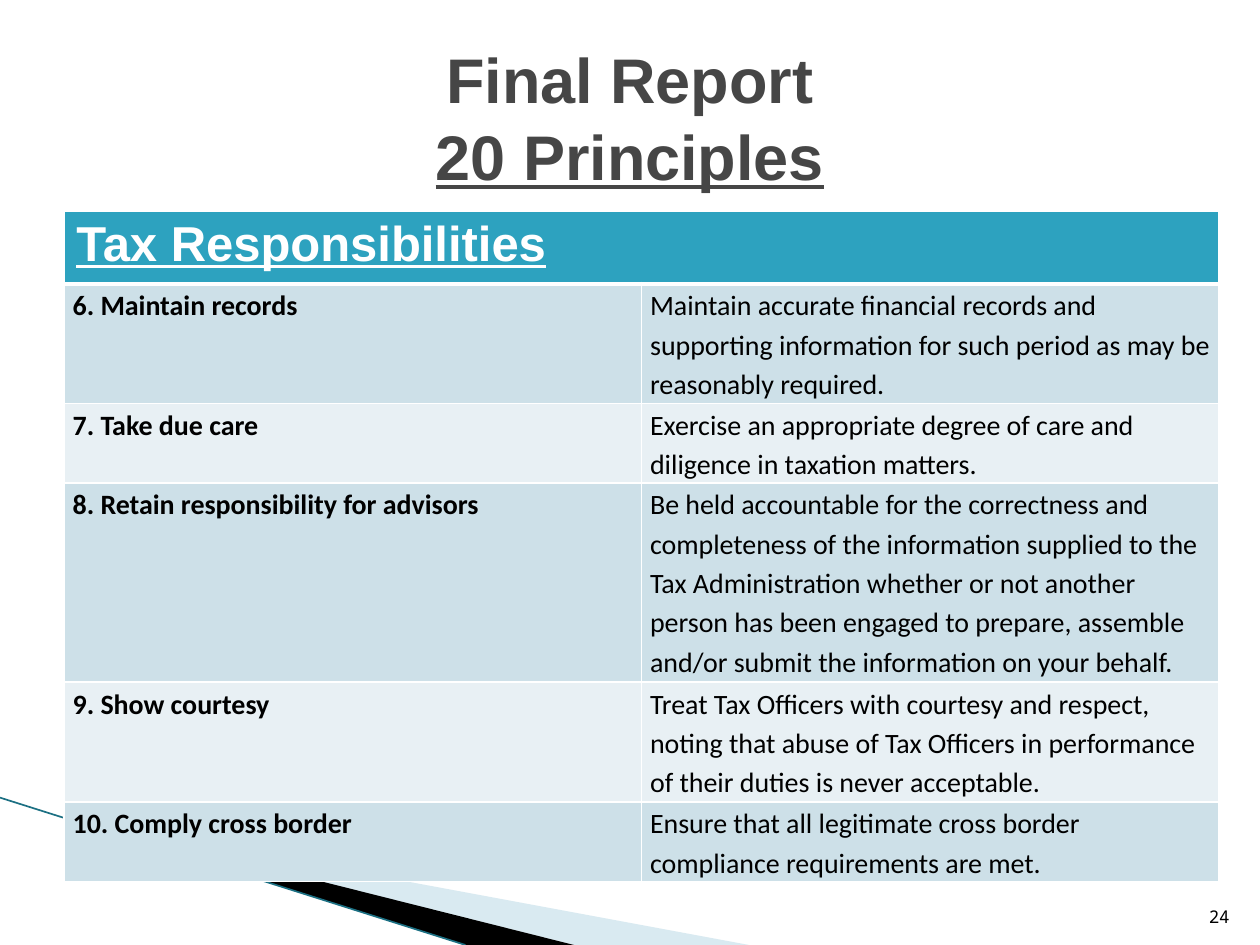
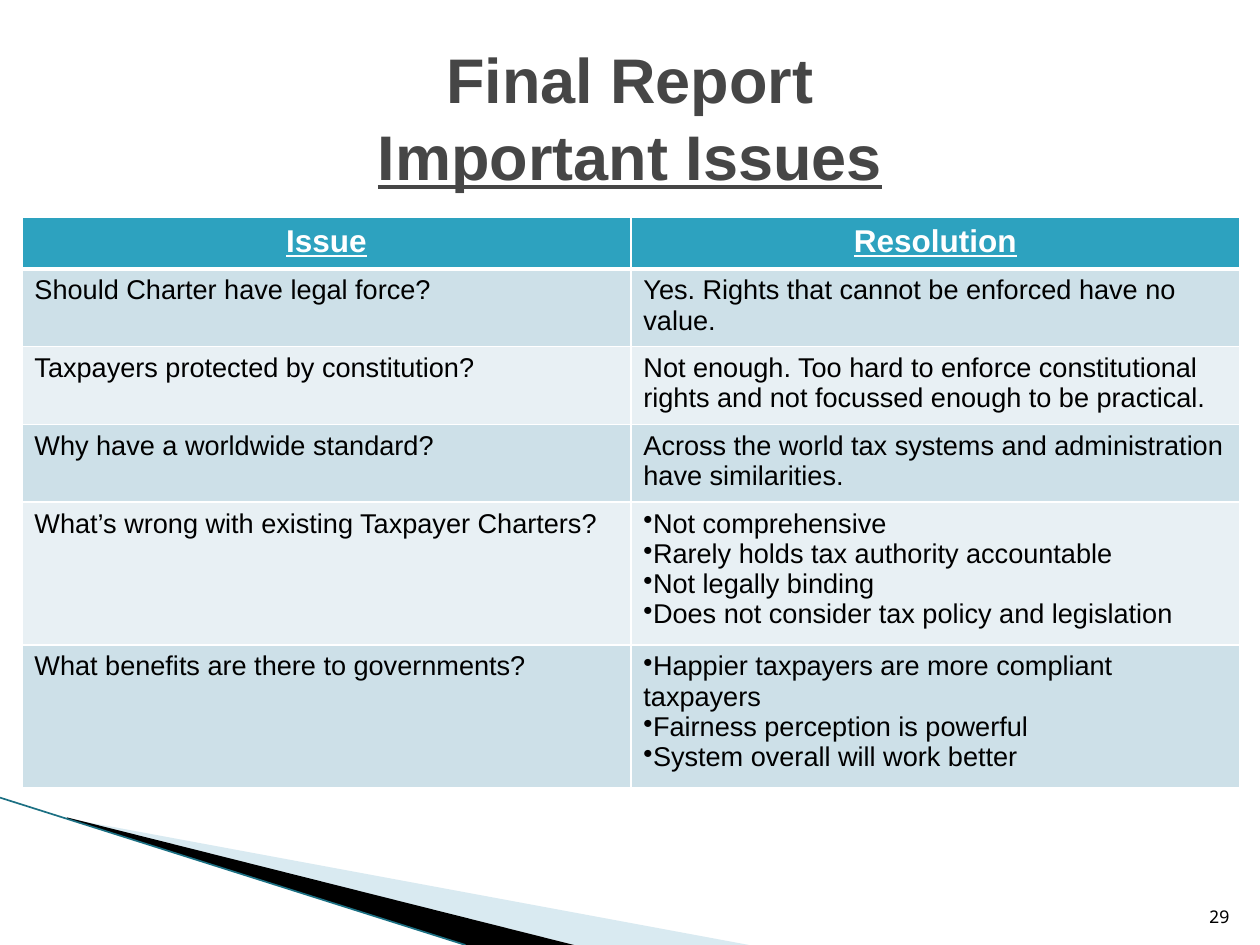
from dataclasses import dataclass

from lxml import etree
from pptx import Presentation
from pptx.dml.color import RGBColor
from pptx.enum import text as txt
from pptx.enum import shapes as shp
from pptx.oxml import ns
from pptx.util import Pt


@dataclass(frozen=True)
class Theme:
    title: str = "464646"
    ink: str = "000000"
    white: str = "FFFFFF"
    header: str = "2DA2BF"
    bands: tuple = ("CDE0E8", "E8F0F4")
    pale_wedge: str = "A0CBDC"
    edge: str = "1C7083"
    heading_font: str = "Arial"
    body_font: str = "Calibri"
    number_font: str = "Noto Sans Mono"
    title_size: float = 36
    number_size: float = 10
    grid_width: float = 1
    header_rule: float = 3


THEME = Theme()


@dataclass(frozen=True)
class CellStyle:
    size: float
    font: str
    colour: str = THEME.ink
    bold_columns: tuple = ()
    underline: bool = False
    align: txt.PP_ALIGN = txt.PP_ALIGN.LEFT
    spacing: float | None = None
    inset: tuple = (7.2, 3.6)


@dataclass(frozen=True)
class Grid:
    left: float
    top: float
    width: float
    row_heights: tuple
    header: tuple
    rows: tuple
    header_style: CellStyle
    body_style: CellStyle


@dataclass(frozen=True)
class Page:
    subtitle: str
    number: str
    grid: Grid


@dataclass(frozen=True)
class Wedge:
    points: tuple
    colour: str
    alpha: int = 100


WEDGES = (
    Wedge(((39.6, 468.5), (428.4, 540), (328.3, 540), (39.6, 468)), THEME.pale_wedge, 40),
    Wedge(((38.2, 467.3), (328.3, 540), (266.5, 540), (38.9, 468)), THEME.ink),
)

PAGES = (
    Page("20 Principles", "24", Grid(
        left=36.5, top=120.5, width=660, row_heights=(41.8, 68.4, 45.4, 113.8, 68.4, 45.4),
        header=("Tax Responsibilities",),
        rows=(
            ("6. Maintain records",
             "Maintain accurate financial records and supporting information "
             "for such period as may be reasonably required."),
            ("7. Take due care",
             "Exercise an appropriate degree of care and diligence in taxation matters."),
            ("8. Retain responsibility for advisors",
             "Be held accountable for the correctness and completeness of the "
             "information supplied to the Tax Administration whether or not another "
             "person has been engaged to prepare, assemble and/or submit the "
             "information on your behalf."),
            ("9. Show courtesy",
             "Treat Tax Officers with courtesy and respect, noting that abuse of Tax "
             "Officers in performance of their duties is never acceptable."),
            ("10. Comply cross border",
             "Ensure that all legitimate cross border compliance requirements are met."),
        ),
        header_style=CellStyle(28, THEME.heading_font, THEME.white, (0,), True),
        body_style=CellStyle(16, THEME.body_font, bold_columns=(0,), spacing=1.15,
                             inset=(5, 0)),
    )),
    Page("Important Issues", "29", Grid(
        left=12.5, top=124.2, width=696, row_heights=(29.5, 41.8, 41.8, 41.8, 76.5, 76.5),
        header=("Issue", "Resolution"),
        rows=(
            ("Should Charter have legal force?",
             "Yes. Rights that cannot be enforced have no value."),
            ("Taxpayers protected by constitution?",
             "Not enough. Too hard to enforce constitutional rights and not "
             "focussed enough to be practical."),
            ("Why have a worldwide standard?",
             "Across the world tax systems and administration have similarities."),
            ("What’s wrong with existing Taxpayer Charters?",
             ("Not comprehensive", "Rarely holds tax authority accountable",
              "Not legally binding", "Does not consider tax policy and legislation")),
            ("What benefits are there to governments?",
             ("Happier taxpayers are more compliant taxpayers",
              "Fairness perception is powerful", "System overall will work better")),
        ),
        header_style=CellStyle(18, THEME.heading_font, THEME.white, (0, 1), True,
                               txt.PP_ALIGN.CENTER),
        body_style=CellStyle(15.5, THEME.heading_font),
    )),
)


def rgb(colour: str) -> RGBColor:
    return RGBColor.from_string(colour)


def sub(parent, tag: str, **attributes):
    return etree.SubElement(parent, ns.qn(tag), **attributes)


def write(frame, content: str, *, size: float, font: str, colour: str,
          bold: bool = False, underline: bool = False, bullet: bool = False,
          align=txt.PP_ALIGN.LEFT, spacing=None) -> None:
    """Add one paragraph, using the frame's first one while it is empty."""
    first = frame.paragraphs[0]
    paragraph = frame.add_paragraph() if first.runs else first
    paragraph.alignment = align
    if spacing:
        paragraph.line_spacing = spacing
    if bullet:
        sub(paragraph._p.get_or_add_pPr(), "a:buChar", char="•")
    run = paragraph.add_run()
    run.text = content
    run.font.size, run.font.name = Pt(size), font
    run.font.bold, run.font.underline = bold, underline
    run.font.color.rgb = rgb(colour)


def add_frame(slide, left: float, top: float, width: float, height: float, anchor):
    frame = slide.shapes.add_textbox(Pt(left), Pt(top), Pt(width), Pt(height)).text_frame
    frame.word_wrap = True
    frame.vertical_anchor = anchor
    return frame


def draw_wedge(slide, wedge: Wedge) -> None:
    start, *others = wedge.points
    builder = slide.shapes.build_freeform(*start, scale=Pt(1))
    builder.add_line_segments(others, close=True)
    shape = builder.convert_to_shape()
    shape.shadow.inherit = False
    shape.line.fill.background()
    shape.fill.solid()
    shape.fill.fore_color.rgb = rgb(wedge.colour)
    if wedge.alpha < 100:
        fill_colour = shape._element.spPr.find(".//" + ns.qn("a:srgbClr"))
        sub(fill_colour, "a:alpha", val=str(wedge.alpha * 1000))


def draw_backdrop(slide) -> None:
    for wedge in WEDGES:
        draw_wedge(slide, wedge)
    edge = slide.shapes.add_connector(shp.MSO_CONNECTOR.STRAIGHT,
                                      Pt(0), Pt(455.8), Pt(266), Pt(540))
    edge.line.color.rgb = rgb(THEME.edge)
    edge.line.width = Pt(0.95)
    sub(edge._element.spPr, "a:effectLst")


def set_borders(cell, top: float, bottom: float) -> None:
    properties = cell._tc.get_or_add_tcPr()
    widths = {"a:lnL": THEME.grid_width, "a:lnR": THEME.grid_width,
              "a:lnT": top, "a:lnB": bottom}
    for tag, width in widths.items():
        line = sub(properties, tag, w=str(Pt(width)))
        sub(sub(line, "a:solidFill"), "a:srgbClr", val=THEME.white)


def fill_cell(cell, content, style: CellStyle, column: int) -> None:
    """Write a string as plain text, or a tuple of strings as bullets."""
    cell.margin_left = cell.margin_right = Pt(style.inset[0])
    cell.margin_top = cell.margin_bottom = Pt(style.inset[1])
    bullet = isinstance(content, tuple)
    for line in content if bullet else (content,):
        write(cell.text_frame, line, size=style.size, font=style.font,
              colour=style.colour, bold=column in style.bold_columns,
              underline=style.underline, bullet=bullet, align=style.align,
              spacing=style.spacing)


def draw_grid(slide, grid: Grid) -> None:
    rows = (grid.header, *grid.rows)
    columns = len(grid.rows[0])
    table = slide.shapes.add_table(len(rows), columns, Pt(grid.left), Pt(grid.top),
                                   Pt(grid.width), Pt(sum(grid.row_heights))).table
    for column in table.columns:
        column.width = Pt(grid.width / columns)
    for r, contents in enumerate(rows):
        table.rows[r].height = Pt(grid.row_heights[r])
        style = grid.body_style if r else grid.header_style
        for c in range(columns):
            cell = table.cell(r, c)
            set_borders(cell, top=THEME.header_rule if r == 1 else THEME.grid_width,
                        bottom=THEME.grid_width if r else THEME.header_rule)
            cell.fill.solid()
            cell.fill.fore_color.rgb = rgb(THEME.bands[(r - 1) % 2] if r else THEME.header)
            if c < len(contents):
                fill_cell(cell, contents[c], style, c)
    if len(grid.header) < columns:
        table.cell(0, 0).merge(table.cell(0, columns - 1))


def draw_page(deck, page: Page) -> None:
    slide = deck.slides.add_slide(deck.slide_layouts[6])
    draw_backdrop(slide)
    title = add_frame(slide, 36, 21.6, 648, 90, txt.MSO_ANCHOR.MIDDLE)
    for line, underline in (("Final Report", False), (page.subtitle, True)):
        write(title, line, size=THEME.title_size, font=THEME.heading_font,
              colour=THEME.title, bold=True, underline=underline,
              align=txt.PP_ALIGN.CENTER, spacing=Pt(43.5))
    draw_grid(slide, page.grid)
    number = add_frame(slide, 681, 504.7, 28.8, 28.8, txt.MSO_ANCHOR.BOTTOM)
    write(number, page.number, size=THEME.number_size, font=THEME.number_font,
          colour=THEME.ink, align=txt.PP_ALIGN.RIGHT)


def main() -> None:
    deck = Presentation()
    deck.slide_width, deck.slide_height = Pt(720), Pt(540)
    for page in PAGES:
        draw_page(deck, page)
    deck.save("out.pptx")


if __name__ == "__main__":
    main()
